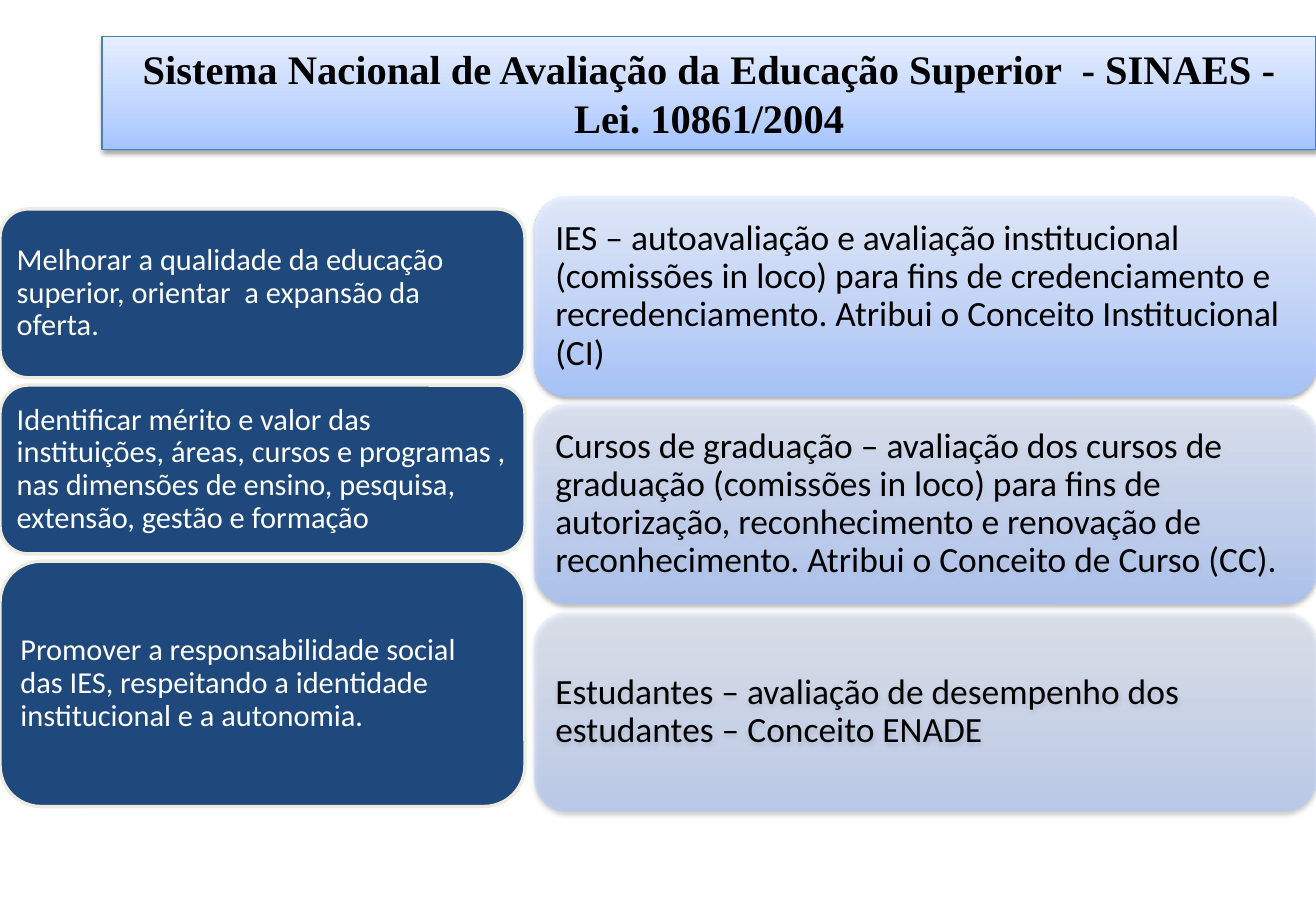
from lxml import etree
from pptx import Presentation
from pptx.dml.color import RGBColor
from pptx.enum.shapes import MSO_SHAPE
from pptx.enum.text import MSO_ANCHOR, MSO_AUTO_SIZE, PP_ALIGN
from pptx.oxml.ns import qn
from pptx.util import Inches, Pt

ROUNDED = MSO_SHAPE.ROUNDED_RECTANGLE
MIDDLE = MSO_ANCHOR.MIDDLE
NO_AUTOFIT = MSO_AUTO_SIZE.NONE
CENTER, LEFT = PP_ALIGN.CENTER, PP_ALIGN.LEFT

COLORS = {
    "navy": "1F497D", "cream": "EEECE1", "border": "4B7EBC",
    "black": "000000", "white": "FFFFFF",
    "sky_deep": "A4C4FF", "sky_mid": "BFD4FF", "sky_pale": "E6EEFF",
}
SKY_STOPS = [(0, "sky_deep"), (35, "sky_mid"), (100, "sky_pale")]

GOALS = [
    (1.72, 1.39, "Melhorar a qualidade da educação superior, orientar  a expansão da oferta."),
    (3.17, 1.39, "Identificar mérito e valor das instituições, áreas, cursos e programas , "
                 "nas dimensões de ensino, pesquisa, extensão, gestão e formação"),
    (4.62, 2.02, "Promover a responsabilidade social das IES, respeitando a identidade "
                 "institucional e a autonomia."),
]
EVALUATIONS = [
    "IES – autoavaliação e avaliação institucional (comissões in loco) para fins de "
    "credenciamento e recredenciamento. Atribui o Conceito Institucional (CI)",
    "Cursos de graduação – avaliação dos cursos de graduação (comissões in loco) para fins de "
    "autorização, reconhecimento e renovação de reconhecimento. Atribui o Conceito de Curso (CC).",
    "Estudantes – avaliação de desempenho dos estudantes – Conceito ENADE",
]


class SlideBuilder:
    """Draws the styled elements of one slide."""

    def __init__(self, prs):
        self.s = prs.slides.add_slide(prs.slide_layouts[5])

    def color(self, name):
        return RGBColor.from_string(COLORS[name])

    def outline(self, sp, name, width):
        sp.line.color.rgb = self.color(name)
        sp.line.width = Pt(width)

    def sky_fill(self, sp, opacity=100):
        sp.fill.gradient()
        sp.fill.gradient_angle = 90
        stops = sp._element.spPr.find(".//" + qn("a:gsLst"))
        for stop in list(stops):
            stops.remove(stop)
        for position, name in SKY_STOPS:
            stop = etree.SubElement(stops, qn("a:gs"), pos=str(position * 1000))
            self.add_color(stop, name, opacity)

    def add_color(self, parent, name, opacity):
        clr = etree.SubElement(parent, qn("a:srgbClr"), val=COLORS[name])
        if opacity < 100:
            etree.SubElement(clr, qn("a:alpha"), val=str(opacity * 1000))

    def drop_shadow(self, sp):
        sp.shadow.inherit = False
        effects = sp._element.spPr.find(qn("a:effectLst"))
        shadow = etree.SubElement(
            effects, qn("a:outerShdw"), blurRad=str(Pt(3.1)), dist=str(Pt(1.6)),
            dir="5400000", rotWithShape="0")
        self.add_color(shadow, "black", 38)

    def text(self, sp, text, font, size, color, align=LEFT):
        tf = sp.text_frame
        tf.text = text
        tf.word_wrap = True
        tf.auto_size = NO_AUTOFIT
        tf.vertical_anchor = MIDDLE
        p = tf.paragraphs[0]
        p.alignment = align
        p.font.name, p.font.size = font, Pt(size)
        p.font.color.rgb = self.color(color)
        return p

    def title(self, text, left, top, width, height):
        sp = self.s.shapes.title
        sp.left, sp.top = Inches(left), Inches(top)
        sp.width, sp.height = Inches(width), Inches(height)
        self.sky_fill(sp)
        self.outline(sp, "border", 0.75)
        self.drop_shadow(sp)
        p = self.text(sp, text, "Times New Roman", 24, "black", CENTER)
        p.font.bold = True

    def card(self, text, left, top, width, height, size, color, inset):
        sp = self.s.shapes.add_shape(
            ROUNDED, Inches(left), Inches(top), Inches(width), Inches(height))
        sp.shadow.inherit = False
        p = self.text(sp, text, "Calibri", size, color)
        p.line_spacing = 0.9
        tf = sp.text_frame
        tf.margin_left = tf.margin_right = Inches(inset)
        tf.margin_top = tf.margin_bottom = Inches(inset)
        return sp

    def goal(self, text, top, height):
        sp = self.card(text, 0, top, 4.32, height, 18, "white", 0.07)
        sp.fill.solid()
        sp.fill.fore_color.rgb = self.color("navy")
        self.outline(sp, "cream", 2)

    def evaluation(self, text, top, opacity):
        sp = self.card(text, 4.4, top, 6.43, 1.64, 21, "black", 0.09)
        self.sky_fill(sp, opacity)
        sp.line.fill.background()
        self.drop_shadow(sp)


def main():
    prs = Presentation()
    prs.slide_width, prs.slide_height = Inches(10.83), Inches(7.5)
    slide = SlideBuilder(prs)
    slide.title("Sistema Nacional de Avaliação da Educação Superior  - SINAES - Lei. 10861/2004",
                0.84, 0.3, 9.99, 0.93)
    for top, height, text in GOALS:
        slide.goal(text, top, height)
    for i, text in enumerate(EVALUATIONS):
        slide.evaluation(text, 1.62 + i * 1.71, 90 - 20 * i)
    prs.save("out.pptx")


if __name__ == "__main__":
    main()
